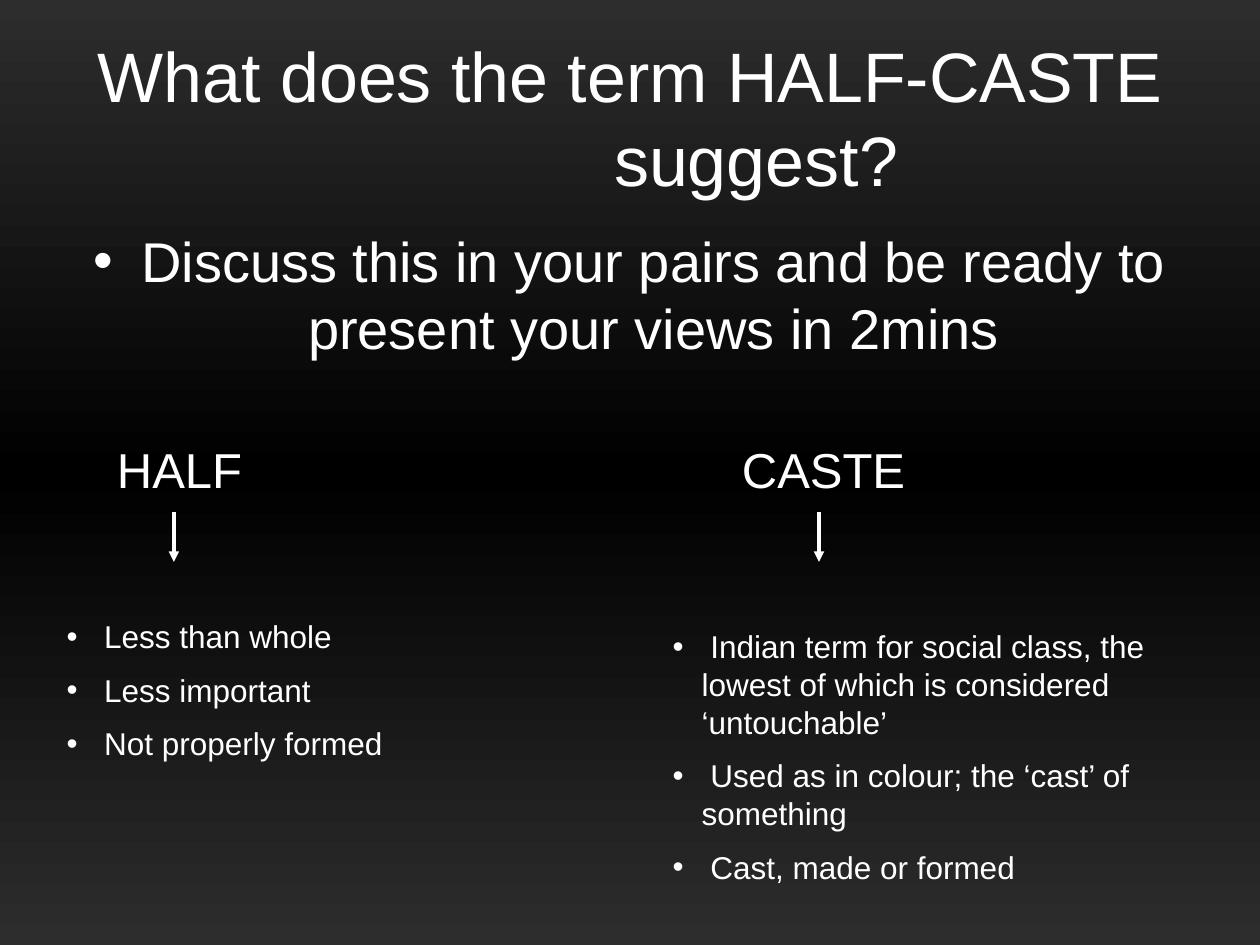
from copy import deepcopy
from dataclasses import dataclass

from lxml.etree import SubElement
from pptx import Presentation
from pptx.dml.color import RGBColor
from pptx.enum.dml import MSO_THEME_COLOR
from pptx.enum.shapes import MSO_CONNECTOR
from pptx.enum.text import MSO_ANCHOR, MSO_AUTO_SIZE, PP_ALIGN
from pptx.oxml.ns import qn
from pptx.util import Inches, Pt

WHITE = "FFFFFF"
BLACK = "000000"
CHARCOAL = "2D2D2D"
HEADING_TOP = 3.44
ARROW_TOP, ARROW_BOTTOM = 4.06, 4.46


@dataclass
class Box:
    left: float
    top: float
    width: float
    height: float

    def lengths(self) -> tuple:
        return tuple(map(Inches, (self.left, self.top, self.width, self.height)))


@dataclass
class Column:
    heading: str
    heading_left: float
    heading_width: float
    arrow_x: float
    meanings_box: Box
    meanings: list[str]


COLUMNS = [
    Column("HALF", 0.83, 1.42, 1.38, Box(0.43, 4.85, 2.76, 1.3),
           [" Less than whole", " Less important", " Not properly formed"]),
    Column("CASTE", 5.79, 1.81, 6.5, Box(5.24, 4.93, 4.02, 2.2),
           [" Indian term for social class, the lowest of which is considered ‘untouchable’",
            " Used as in colour; the ‘cast’ of something",
            " Cast, made or formed"]),
]


def color(value: str) -> RGBColor:
    return RGBColor.from_string(value)


def paint_background(slide) -> None:
    fill = slide.background.fill
    fill.gradient()
    fill.gradient_angle = 270
    stop_list = slide.background._cSld.find(".//" + qn("a:gsLst"))
    stop_list.append(deepcopy(stop_list[-1]))
    for stop, position, shade in zip(fill.gradient_stops, (0, 0.5, 1), (CHARCOAL, BLACK, CHARCOAL)):
        stop.position = position
        stop.color.theme_color = MSO_THEME_COLOR.TEXT_1
        stop.color.rgb = color(shade)


def set_indent(paragraph, left: float, first_line: float = 0) -> None:
    properties = paragraph._p.get_or_add_pPr()
    properties.set("marL", str(Inches(left)))
    properties.set("indent", str(Inches(first_line)))


def add_bullet(paragraph, hanging: float) -> None:
    set_indent(paragraph, hanging, -hanging)
    properties = paragraph._p.get_or_add_pPr()
    SubElement(properties, qn("a:buFont"), typeface="Arial")
    SubElement(properties, qn("a:buChar"), char="•")


def write_text(shape, lines: list[str], size: float, alignment=PP_ALIGN.LEFT,
               space_before: float = 0, hanging: float = 0) -> None:
    frame = shape.text_frame
    frame.word_wrap = True
    frame.auto_size = MSO_AUTO_SIZE.NONE
    for index, line in enumerate(lines):
        paragraph = frame.add_paragraph() if index else frame.paragraphs[0]
        paragraph.text = line
        paragraph.alignment = alignment
        paragraph.space_before = Pt(space_before if index else 0)
        paragraph.font.name = "Arial"
        paragraph.font.size = Pt(size)
        paragraph.font.color.rgb = color(WHITE)
        if hanging:
            add_bullet(paragraph, hanging)


def add_title(slide, lines: list[str], box: Box) -> None:
    title = slide.shapes.title
    title.left, title.top, title.width, title.height = box.lengths()
    write_text(title, lines, 40, PP_ALIGN.CENTER)
    title.text_frame.vertical_anchor = MSO_ANCHOR.MIDDLE
    set_indent(title.text_frame.paragraphs[1], 2)


def add_text(slide, box: Box, lines: list[str], size: float, **formatting) -> None:
    write_text(slide.shapes.add_textbox(*box.lengths()), lines, size, **formatting)


def add_arrow(slide, x: float) -> None:
    arrow = slide.shapes.add_connector(
        MSO_CONNECTOR.STRAIGHT, Inches(x), Inches(ARROW_TOP), Inches(x), Inches(ARROW_BOTTOM))
    arrow.line.color.rgb = color(WHITE)
    arrow.line.width = Pt(2)
    SubElement(arrow.line._get_or_add_ln(), qn("a:tailEnd"), type="triangle")
    SubElement(arrow._element.spPr, qn("a:effectLst"))


def add_column(slide, column: Column) -> None:
    heading_box = Box(column.heading_left, HEADING_TOP, column.heading_width, 0.57)
    add_text(slide, heading_box, [column.heading], 28)
    add_arrow(slide, column.arrow_x)
    add_text(slide, column.meanings_box, column.meanings, 18, space_before=9, hanging=0.23)


def main() -> None:
    presentation = Presentation()
    presentation.slide_width, presentation.slide_height = Inches(10), Inches(7.5)
    slide = presentation.slides.add_slide(presentation.slide_layouts[5])
    paint_background(slide)
    add_title(slide, ["What does the term HALF-CASTE", "suggest?"], Box(0.5, 0.3, 9, 1.25))
    add_text(slide, Box(0.5, 1.75, 9, 1.25),
             ["Discuss this in your pairs and be ready to present your views in 2mins"],
             32, alignment=PP_ALIGN.CENTER, hanging=0.38)
    for column in COLUMNS:
        add_column(slide, column)
    presentation.save("out.pptx")


if __name__ == "__main__":
    main()
